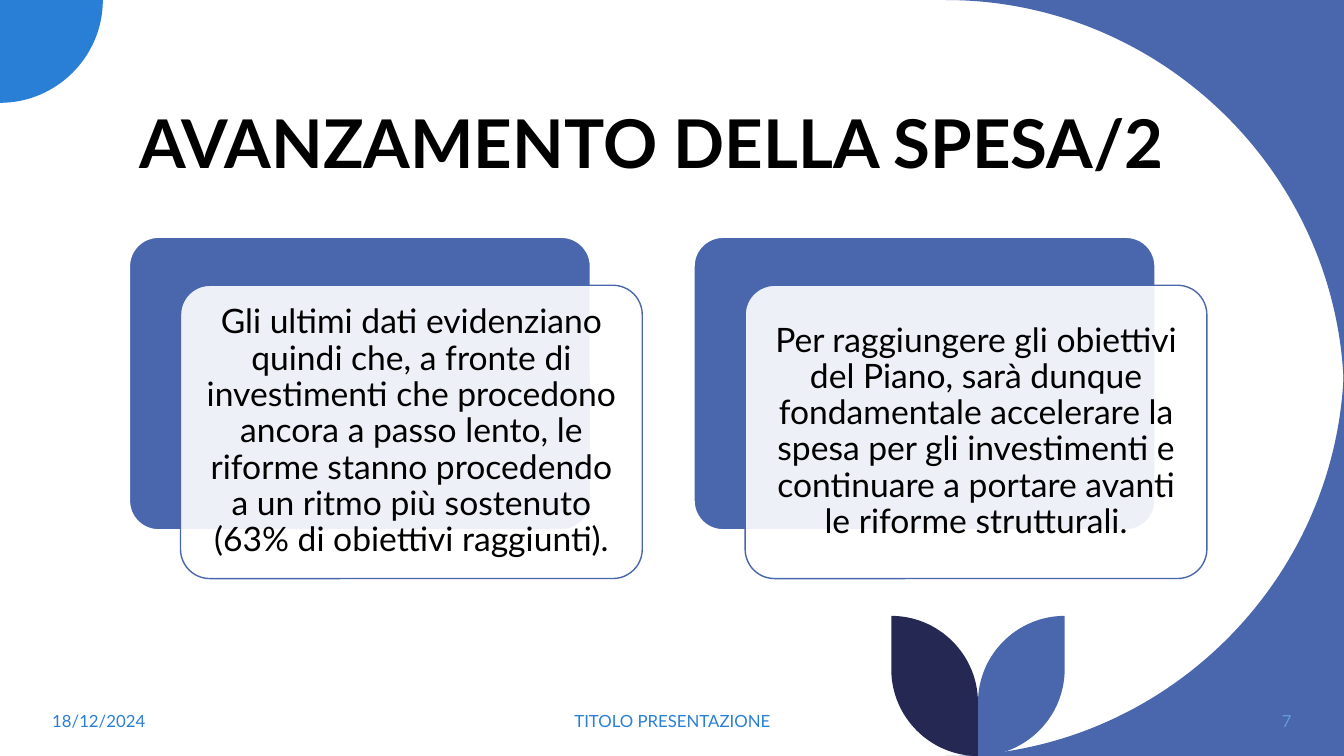
from dataclasses import dataclass

from lxml import etree
from pptx import Presentation
from pptx.dml.color import RGBColor
from pptx.enum import shapes, text
from pptx.oxml import ns
from pptx.util import Inches, Pt


@dataclass(frozen=True)
class Theme:
    """Colours, font and type sizes of the slide."""
    blue: str = "4A66AC"
    bright: str = "297FD5"
    navy: str = "242852"
    pale: str = "629DD1"
    white: str = "FFFFFF"
    black: str = "000000"
    font: str = "Lato"
    title: int = 48
    body: int = 24
    footer: int = 12


T = Theme()
W, H = 13.33, 7.5
ROUND = 0.55
CARDS = (
    "Gli ultimi dati evidenziano quindi che, a fronte di investimenti che procedono "
    "ancora a passo lento, le riforme stanno procedendo a un ritmo più sostenuto "
    "(63% di obiettivi raggiunti).",
    "Per raggiungere gli obiettivi del Piano, sarà dunque fondamentale accelerare la "
    "spesa per gli investimenti e continuare a portare avanti le riforme strutturali.",
)


def paint(s, fill, line=None, width=1):
    """Give a shape a flat fill, an optional line and no shadow."""
    s.shadow.inherit = False
    s.fill.solid()
    s.fill.fore_color.rgb = RGBColor.from_string(fill)
    if line:
        s.line.color.rgb = RGBColor.from_string(line)
        s.line.width = Pt(width)
    else:
        s.line.fill.background()


def write(s, words, size, color, align, anchor, bold=False, spacing=None):
    """Write one paragraph into a shape."""
    tf = s.text_frame
    tf.word_wrap = True
    tf.auto_size = text.MSO_AUTO_SIZE.NONE
    tf.vertical_anchor = anchor
    p = tf.paragraphs[0]
    p.alignment = align
    p.line_spacing = spacing
    r = p.add_run()
    r.text = words
    r.font.name = T.font
    r.font.size = Pt(size)
    r.font.bold = bold
    r.font.color.rgb = RGBColor.from_string(color)


def toward(a, b):
    """Return the Bezier handle of a quarter ellipse from a toward its corner b."""
    return tuple(p + ROUND * (q - p) for p, q in zip(a, b))


def outline(sp, fill, start, *segments):
    """Draw a closed outline; a segment is (end,) or, for a quarter arc, (corner, end)."""
    ends = [seg[-1] for seg in segments]
    fb = sp.build_freeform(*(Inches(v) for v in start), scale=1.0)
    fb.add_line_segments([(Inches(x), Inches(y)) for x, y in ends])
    s = fb.convert_to_shape()
    paint(s, fill)
    sides = list(s._element.iter(ns.qn("a:lnTo")))
    for side, seg, a in zip(sides, segments, [start] + ends):
        if len(seg) == 2:
            corner, b = seg
            side.tag = ns.qn("a:cubicBezTo")
            side.clear()
            for x, y in (toward(a, corner), toward(b, corner), b):
                etree.SubElement(side, ns.qn("a:pt"), x=str(Inches(x) - s.left),
                                 y=str(Inches(y) - s.top))


def add_corners(sp, w, h, radius=3.95, small=1.02):
    """Draw the curved right edge and the quarter disc at top left."""
    x = w - radius
    outline(sp, T.blue, (w, 0), ((x, 0),), ((w, 0), (w, radius)))
    outline(sp, T.blue, (w, h - radius), ((w, h), (x, h)), ((w, h),))
    outline(sp, T.bright, (0, 0), ((small, 0),), ((small, small), (0, small)))


def add_leaves(sp, stem, top, bottom, leaf=0.86):
    """Draw two mirrored leaves on either side of a stem."""
    for x, fill in ((stem + leaf, T.blue), (stem - leaf, T.navy)):
        outline(sp, fill, (x, top), ((x, bottom - leaf),),
                ((x, bottom), (stem, bottom)), ((stem, top + leaf),),
                ((stem, top), (x, top)))


def add_title(s, x, y, w, h):
    """Place and format the title placeholder."""
    s.left, s.top, s.width, s.height = (Inches(v) for v in (x, y, w, h))
    write(s, "AVANZAMENTO DELLA SPESA/2", T.title, T.black, text.PP_ALIGN.LEFT,
          text.MSO_ANCHOR.BOTTOM, True, 0.9)


def add_card(sp, x, y, w, h, words, shift=(0.51, 0.48)):
    """Draw a blue panel with a translucent text panel offset over it."""
    dx, dy = shift
    for left, top, look in ((x, y, (T.blue, T.white, 1.5)),
                            (x + dx, y + dy, (T.white, T.blue, 1))):
        s = sp.add_shape(shapes.MSO_SHAPE.ROUNDED_RECTANGLE,
                         *(Inches(v) for v in (left, top, w, h)))
        s.adjustments[0] = 0.1
        paint(s, *look)
    color = s.fill._xPr.find(ns.qn("a:solidFill"))[0]
    etree.SubElement(color, ns.qn("a:alpha"), val="90000")
    tf = s.text_frame
    tf.margin_left = tf.margin_right = tf.margin_top = tf.margin_bottom = Inches(0.1)
    write(s, words, T.body, T.black, text.PP_ALIGN.CENTER, text.MSO_ANCHOR.MIDDLE,
          spacing=0.9)


def add_footer(sp, y, h):
    """Write the date, footer and slide number along the bottom."""
    al = text.PP_ALIGN
    for x, w, words, color, align in (
            (0.42, 3, "18/12/2024", T.bright, al.LEFT),
            (4.42, 4.5, "TITOLO PRESENTAZIONE", T.bright, al.CENTER),
            (11.1, 1.81, "7", T.pale, al.RIGHT)):
        s = sp.add_textbox(*(Inches(v) for v in (x, y, w, h)))
        write(s, words, T.footer, color, align, text.MSO_ANCHOR.MIDDLE)


def main():
    """Build the slide and save it."""
    prs = Presentation()
    prs.slide_width, prs.slide_height = Inches(W), Inches(H)
    slide = prs.slides.add_slide(prs.slide_layouts[5])
    sp = slide.shapes
    add_corners(sp, W, H)
    add_leaves(sp, 9.7, 6.11, H)
    add_title(sp.title, 1.28, 0.42, 10.69, 1.45)
    add_footer(sp, 6.95, 0.4)
    for i, words in enumerate(CARDS):
        add_card(sp, 1.28 + i * 5.6, 2.35, 4.58, 2.91, words)
    prs.save("out.pptx")


if __name__ == "__main__":
    main()
